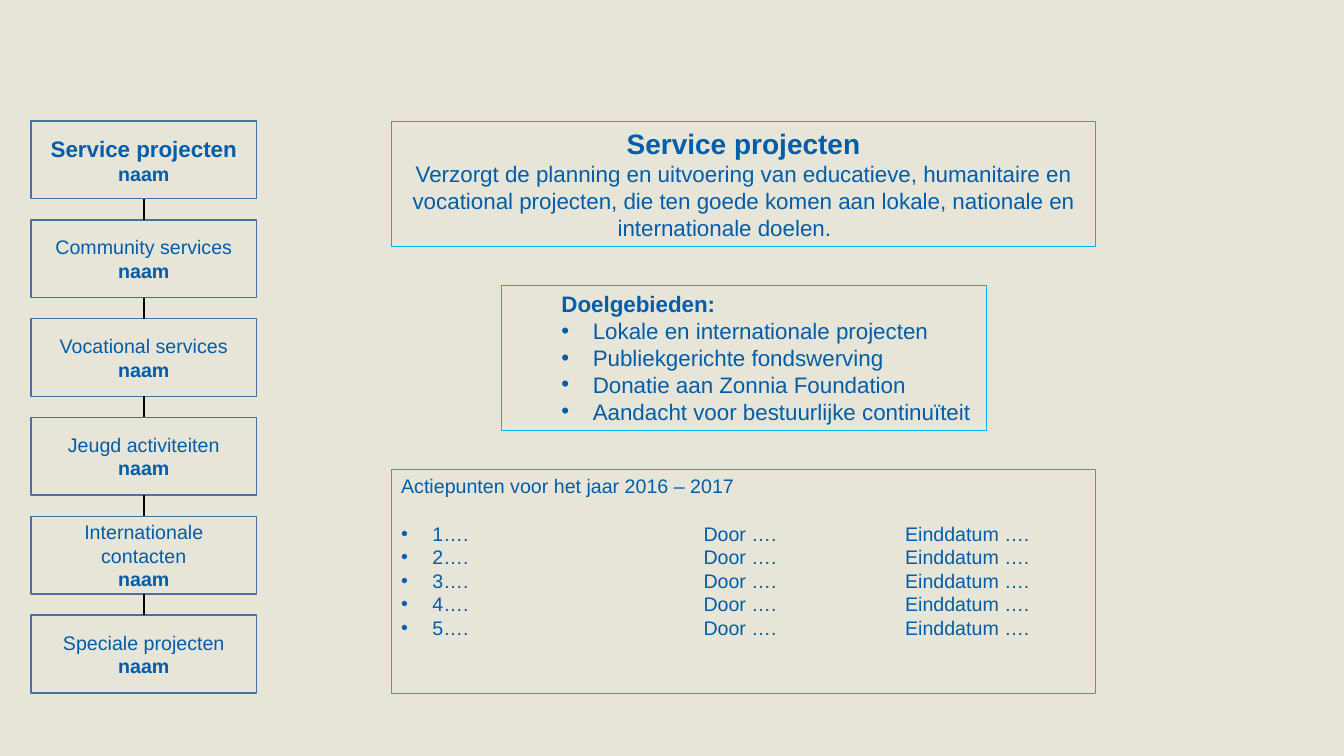
from lxml import etree
from pptx import Presentation
from pptx.dml.color import RGBColor
from pptx.enum import shapes, text
from pptx.oxml import ns
from pptx.util import Cm, Pt

HUES = {"back": "E6E5D8", "ink": "005DAA", "edge": "43739E", "frame": "00B0F0", "link": "000000"}


def add_box(left, top, width, height, hue, weight, anchor):
    box = slide.shapes.add_shape(shapes.MSO_SHAPE.RECTANGLE, Cm(left), Cm(top), Cm(width), Cm(height))
    box.shadow.inherit = False
    box.fill.background()
    box.line.color.rgb = RGBColor.from_string(HUES[hue])
    box.line.width = Pt(weight)
    frame = box.text_frame
    frame.word_wrap = True
    frame.vertical_anchor = anchor
    return frame


def add_line(frame, words, size, bold=False, align=text.PP_ALIGN.LEFT, left=0, bullet=False, tabs=()):
    para = frame.paragraphs[0]
    if para.runs:
        para = frame.add_paragraph()
    para.alignment = align
    props = para._p.get_or_add_pPr()
    hang = Cm(0.79) if bullet else 0
    props.set("marL", str(Cm(left) + hang))
    props.set("indent", str(-hang))
    if bullet:
        etree.SubElement(props, ns.qn("a:buFont"), typeface="Arial")
        etree.SubElement(props, ns.qn("a:buChar"), char="•")
    if tabs:
        stops = etree.SubElement(props, ns.qn("a:tabLst"))
        for stop in tabs:
            etree.SubElement(stops, ns.qn("a:tab"), pos=str(Cm(stop)), algn="l")
    run = para.add_run()
    run.text = words
    run.font.name = "Arial"
    run.font.size = Pt(size)
    run.font.bold = bold
    run.font.color.rgb = RGBColor.from_string(HUES["ink"])
    return para


deck = Presentation()
deck.slide_width, deck.slide_height = Cm(33.87), Cm(19.05)
slide = deck.slides.add_slide(deck.slide_layouts[6])
slide.background.fill.solid()
slide.background.fill.fore_color.rgb = RGBColor.from_string(HUES["back"])

MID, TOP = text.MSO_ANCHOR.MIDDLE, text.MSO_ANCHOR.TOP
CENTER = text.PP_ALIGN.CENTER

teams = ["Service projecten", "Community services", "Vocational services",
         "Jeugd activiteiten", "Internationale contacten", "Speciale projecten"]
left, first, width, height, step = 0.78, 3.05, 5.69, 1.96, 2.49
for row, team in enumerate(teams):
    top = first + row * step
    frame = add_box(left, top, width, height, "edge", 1, MID)
    add_line(frame, team, 14 if row else 16, not row, CENTER)
    add_line(frame, "naam", 14, True, CENTER)
    if row:
        mid = Cm(left + width / 2)
        link = slide.shapes.add_connector(
            shapes.MSO_CONNECTOR.STRAIGHT, mid, Cm(top - step + height), mid, Cm(top))
        link.line.color.rgb = RGBColor.from_string(HUES["link"])
        link.line.width = Pt(1)
        etree.SubElement(link._element.spPr, ns.qn("a:effectLst"))

intro = add_box(9.86, 3.06, 17.76, 3.16, "frame", 0.75, TOP)
add_line(intro, "Service projecten", 20, True, CENTER)
add_line(intro, "Verzorgt de planning en uitvoering van educatieve, humanitaire en vocational "
         "projecten, die ten goede komen aan lokale, nationale en internationale doelen. \t",
         16, align=CENTER)

goals = add_box(12.63, 7.19, 12.23, 3.67, "frame", 0.75, TOP)
add_line(goals, "Doelgebieden:", 16, True, left=1.27)
for goal in ["Lokale en internationale projecten", "Publiekgerichte fondswerving",
             "Donatie aan Zonnia Foundation", "Aandacht voor bestuurlijke continuïteit"]:
    add_line(goals, goal, 16, left=1.27, bullet=True)

tasks = add_box(9.86, 11.83, 17.76, 5.64, "frame", 0.75, TOP)
add_line(tasks, "Actiepunten voor het jaar 2016 – 2017", 14)
for num in range(1, 6):
    para = add_line(tasks, f"{num}….\tDoor ….\tEinddatum ….", 14, bullet=True, tabs=(7.62, 12.7))
    if num == 1:
        para.space_before = Pt(16.8)

deck.save("out.pptx")
